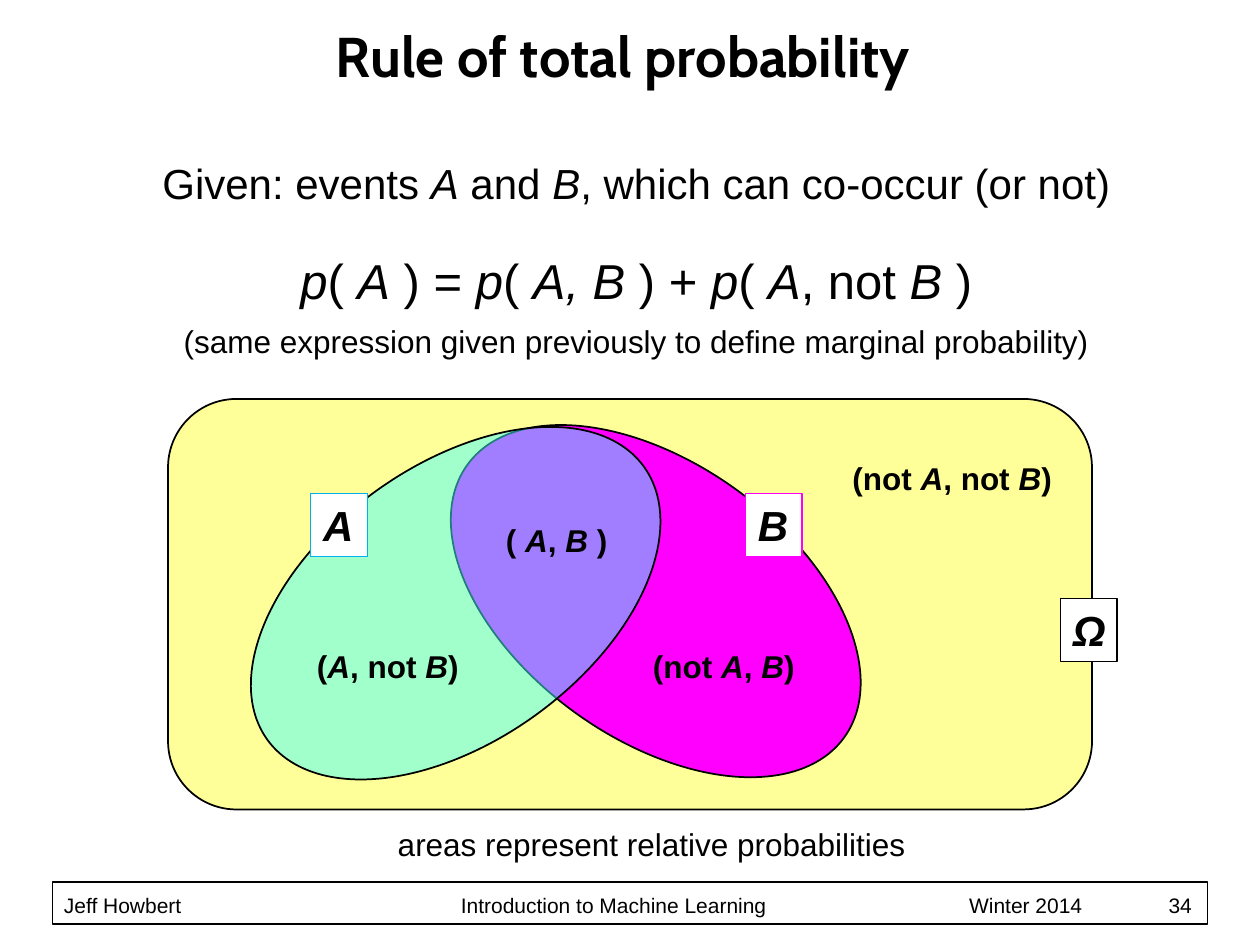
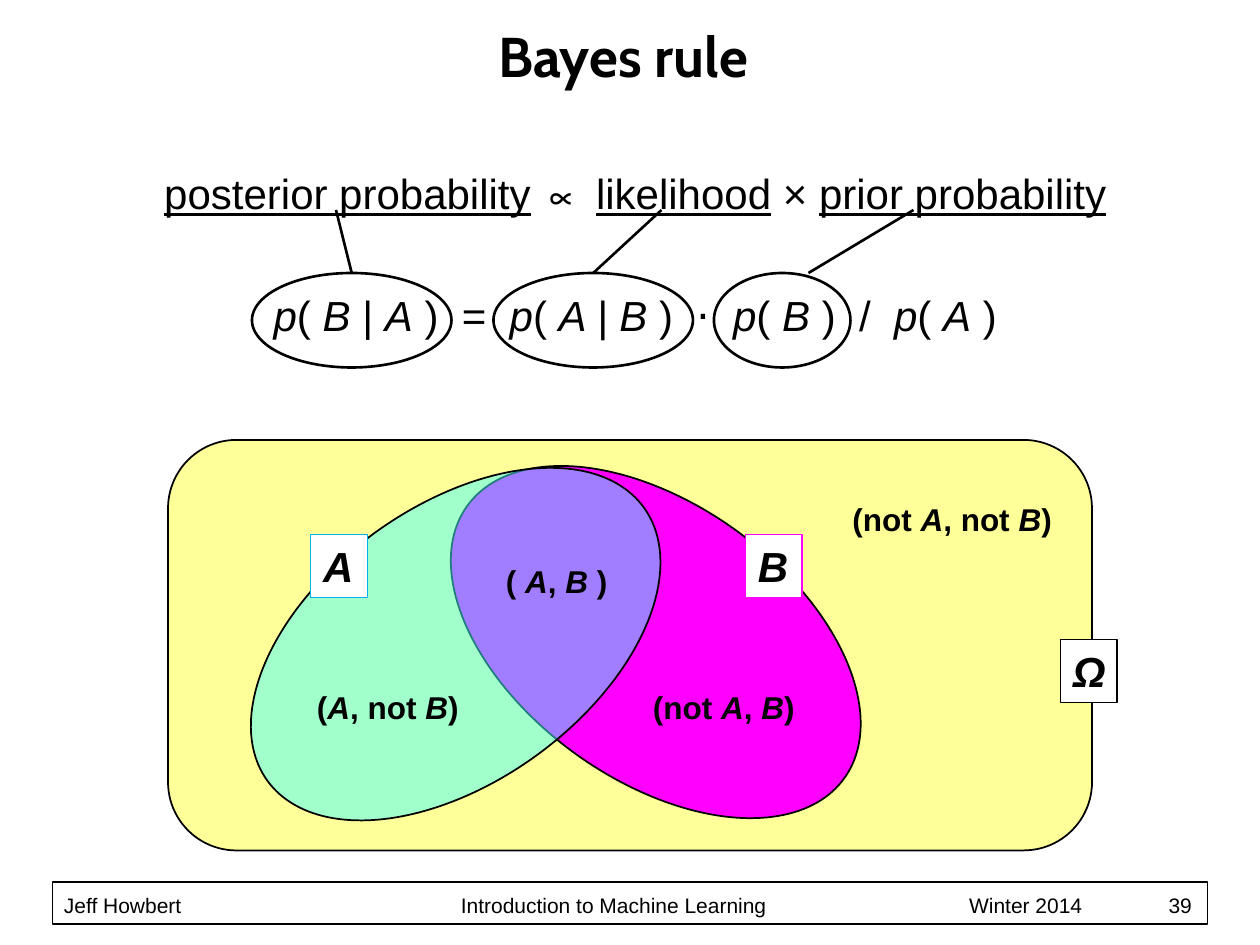
from dataclasses import dataclass
from itertools import groupby

from lxml import etree
from pptx import Presentation
from pptx.dml.color import RGBColor as RGB
from pptx.enum.shapes import MSO_CONNECTOR as CONN, MSO_SHAPE as SHAPE
from pptx.enum.text import MSO_ANCHOR as ANCHOR, PP_ALIGN as ALIGN
from pptx.oxml.ns import qn
from pptx.util import Inches, Pt

COLS, ROWS = 120, 90
MARKS = "*_~"  # italic, underline, wide space


@dataclass(frozen=True)
class Theme:
    font: str = "Arial"
    title_font: str = "Cabin"
    ink: str = "000000"
    paper: str = "FFFFFF"
    omega: str = "FFFF99"
    event_a: str = "40FFFF"
    event_b: str = "FF00FF"
    tag_a: str = "00B0F0"
    title: int = 32
    formula: int = 28
    body: int = 24
    label: int = 18
    footer: int = 12
    wide_space: int = 667


def marked_pieces(text):
    """Yield each stretch of text with the set of marks that enclose it."""
    active = set()
    for mark, chars in groupby(text, lambda c: c if c in MARKS else ""):
        if mark:
            active = active ^ {mark}
        else:
            yield "".join(chars), active


def write(p, text, theme, size, font=None, bold=False, align=ALIGN.LEFT,
          before=0, after=0, line=None):
    """Fill paragraph p; *x* is italic, _x_ underlined, ~ ~ a wide space."""
    p.alignment = align
    p.space_before, p.space_after = Pt(before), Pt(after)
    if line:
        p.line_spacing = Pt(line)
    for piece, marks in marked_pieces(text):
        r = p.add_run()
        r.text = piece
        r.font.name = font or theme.font
        r.font.size = Pt(size)
        r.font.bold = bold
        r.font.italic = "*" in marks
        r.font.underline = "_" in marks
        r.font.color.rgb = RGB.from_string(theme.ink)
        if "~" in marks:
            r.font._element.set("spc", str(theme.wide_space))


class Deck:
    """Draws on the current slide; places are in grid columns and rows."""

    def __init__(self, theme):
        self.theme = theme
        self.prs = Presentation()
        self.prs.slide_width, self.prs.slide_height = Inches(10), Inches(7.5)
        self.col = self.prs.slide_width / COLS
        self.row = self.prs.slide_height / ROWS

    def place(self, x, y):
        return round(x * self.col), round(y * self.row)

    def new_slide(self, title, number):
        t = self.theme
        self.s = self.prs.slides.add_slide(self.prs.slide_layouts[6])
        self.footer(number)
        self.text(5, 2, 108.7, 7, (title, dict(
            size=t.title, font=t.title_font, bold=True, align=ALIGN.CENTER, line=36)),
            anchor=ANCHOR.BOTTOM, wrap=True)

    def footer(self, number):
        t = self.theme
        self.shape(SHAPE.RECTANGLE, 5, 84, 110, 4, t.paper)
        line = f"Jeff Howbert\tIntroduction to Machine Learning\tWinter 2014\t{number}"
        tf = self.text(6.1, 84, 108, 3.4, (line, dict(size=t.footer, line=20)),
                       anchor=ANCHOR.BOTTOM, inset=0, wrap=True)
        tabs = etree.Element(qn("a:tabLst"))
        for column in (37.8, 86.2, 105.2):
            etree.SubElement(tabs, qn("a:tab"), pos=str(round(column * self.col)), algn="l")
        tf.paragraphs[0]._p.get_or_add_pPr().append(tabs)

    def fill_text(self, tf, *paragraphs, anchor=ANCHOR.TOP, wrap=False, inset=None):
        tf.word_wrap, tf.vertical_anchor = wrap, anchor
        if inset is not None:
            tf.margin_left = tf.margin_right = tf.margin_top = tf.margin_bottom = inset
        for i, (text, style) in enumerate(paragraphs):
            p = tf.add_paragraph() if i else tf.paragraphs[0]
            write(p, text, self.theme, **style)
        return tf

    def text(self, x, y, w, h, *paragraphs, **frame):
        box = self.s.shapes.add_textbox(*self.place(x, y), *self.place(w, h))
        return self.fill_text(box.text_frame, *paragraphs, **frame)

    def label(self, x, y, w, text, bold=True):
        self.text(x, y, w, 4.8, (text, dict(size=self.theme.label, bold=bold)))

    def shape(self, kind, x, y, w, h, fill=None, line=None, weight=1, turn=0, alpha=None):
        sp = self.s.shapes.add_shape(kind, *self.place(x, y), *self.place(w, h))
        sp.shadow.inherit = False
        sp.rotation = turn
        sp.line.color.rgb = RGB.from_string(line or self.theme.ink)
        sp.line.width = Pt(weight)
        if fill is None:
            sp.fill.background()
        else:
            sp.fill.solid()
            sp.fill.fore_color.rgb = RGB.from_string(fill)
        if alpha:
            color = sp._element.spPr.find(qn("a:solidFill"))[0]
            etree.SubElement(color, qn("a:alpha"), val=str(alpha * 1000))
        return sp

    def tag(self, x, y, text, line):
        sp = self.shape(SHAPE.RECTANGLE, x, y, 5.4, 6, self.theme.paper, line, 0.75)
        self.fill_text(sp.text_frame, (text, dict(size=self.theme.body, bold=True)))

    def link(self, x1, y1, x2, y2, target=None):
        c = self.s.shapes.add_connector(CONN.STRAIGHT, *self.place(x1, y1), *self.place(x2, y2))
        c.line.color.rgb = RGB.from_string(self.theme.ink)
        c.line.width = Pt(1.5)
        etree.SubElement(c._element.spPr, qn("a:effectLst"))
        if target is not None:
            c.end_connect(target, 0)

    def venn(self, top):
        """Sample space with two overlapping events, its upper edge at row top."""
        t = self.theme
        self.shape(SHAPE.ROUNDED_RECTANGLE, 16, top, 88, 39.1, t.omega)
        self.shape(SHAPE.OVAL, 40.3, top + 6.15, 44.3, 26.2, t.event_b, turn=35.9)
        self.shape(SHAPE.OVAL, 21.25, top + 6.35, 44.3, 26.2, t.event_a, turn=324, alpha=49)
        for x, y, w, text in ((29, 23, 16, "(*A*, not *B*)"),
                              (47, 11, 12.1, "( *A*, *B* )"),
                              (61, 23, 16, "(not *A*, *B*)"),
                              (80, 5.15, 22, "(not *A*, not *B*)")):
            self.label(x, top + y, w, text)
        for x, y, text, line in ((71, 9, "*B*", t.event_b),
                                 (29.6, 9, "*A*", t.tag_a),
                                 (101, 19, "*Ω*", t.ink)):
            self.tag(x, top + y, text, line)


def total_probability(deck):
    t = deck.theme
    deck.new_slide("Rule of total probability", 34)
    centred = dict(align=ALIGN.CENTER, after=4)
    deck.text(
        6, 14.4, 109.2, 18.5,
        ("Given: events *A* and *B*, which can co-occur (or not)", dict(size=t.body, **centred)),
        ("*p*( *A* ) = *p*( *A, B* ) + *p*( *A*, not *B* )",
         dict(size=t.formula, before=20.5, **centred)),
        ("(same expression given previously to define marginal probability)",
         dict(size=t.label, before=3, **centred)),
        wrap=True)
    deck.label(36.7, 78, 51.2, "areas represent relative probabilities", bold=False)
    deck.venn(38)


def bayes_rule(deck):
    t = deck.theme
    deck.new_slide("Bayes rule", 39)
    centred = dict(size=t.body, align=ALIGN.CENTER, after=4)
    deck.text(
        6, 15.4, 109, 17.6,
        ("_posterior probability_ ∝ _likelihood_ × _prior probability_", centred),
        ("*p*( *B* | *A* )~ ~=~ ~*p*( *A | B* )~ ~⋅~ ~*p*( *B* )~ ~/~ ~*p*( *A* )",
         dict(before=36.5, **centred)),
        wrap=True)
    deck.venn(41.9)
    # left and width of each ring, then the columns where its line starts and ends
    for x, w, start, end in ((24, 19, 32, 33.5), (47, 19, 63, 56.5), (68, 13, 87, 77)):
        ring = deck.shape(SHAPE.OVAL, x, 26, w, 9, weight=1.5)
        deck.link(start, 20, end, 26, ring if end == x + w / 2 else None)


def main():
    deck = Deck(Theme())
    total_probability(deck)
    bayes_rule(deck)
    deck.prs.save("out.pptx")


if __name__ == "__main__":
    main()
